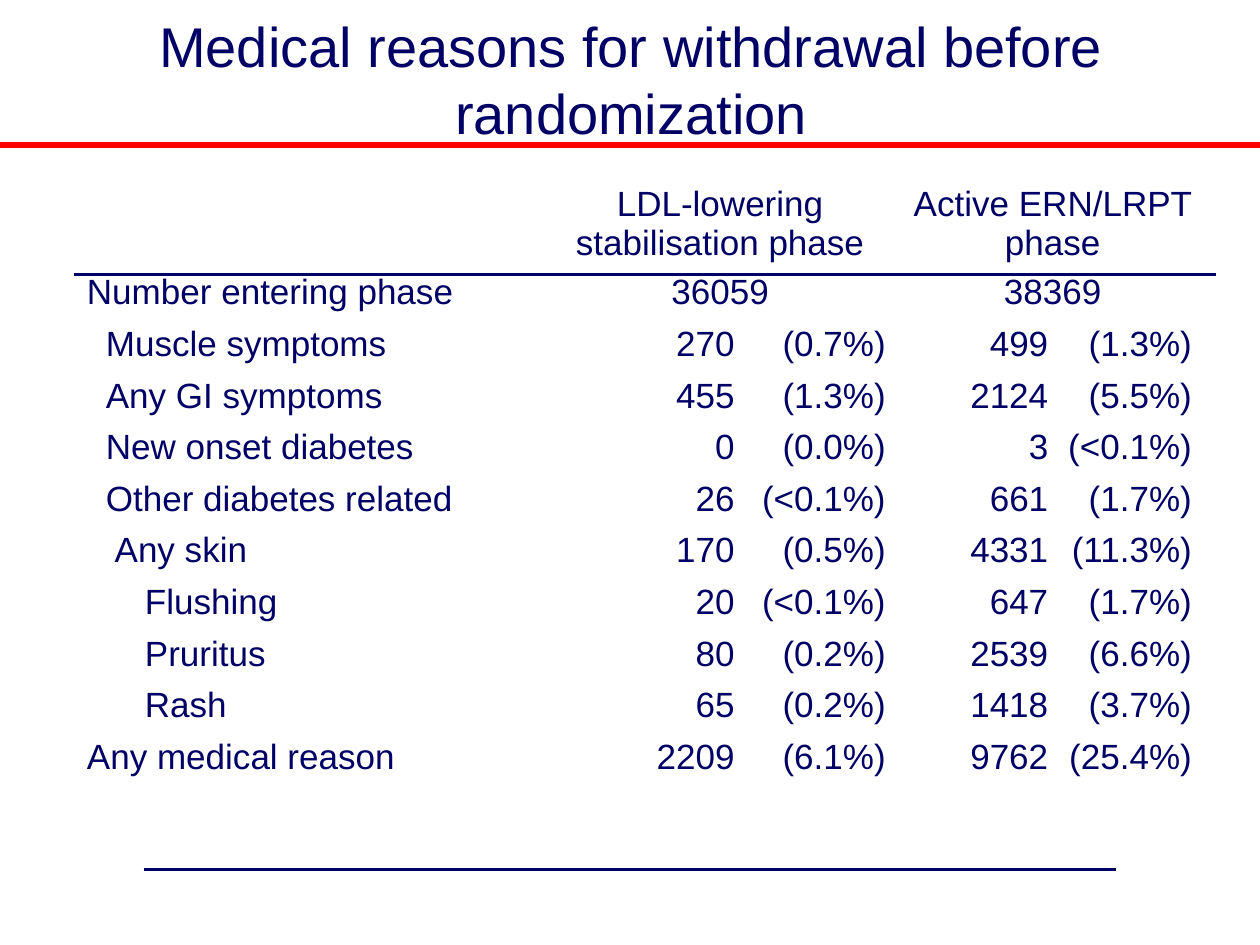
"""Build the slide on medical reasons for withdrawal before randomization."""
from pptx import Presentation
from pptx.dml.color import RGBColor
from pptx.enum import shapes, text
from pptx.oxml.ns import qn
from pptx.util import Inches, Pt

NAVY = RGBColor(0x00, 0x00, 0x66)
RED = RGBColor(0xFF, 0x00, 0x00)
FONT = "Arial"
TITLE = "Medical reasons for withdrawal before randomization"
HEADINGS = ["", "LDL-lowering stabilisation phase", "Active ERN/LRPT phase"]
COLUMN_WIDTHS = [3.7, 2.85, 2.43]
HEADING_HEIGHT, ROW_HEIGHT = 0.71, 0.41
PHASE_TABS = [(1.44, 2.64), (1.08, 2.22)]
REASONS = [
    (0, "Number entering phase", ("36059",), ("38369",)),
    (0.15, "Muscle symptoms", ("270", "(0.7%)"), ("499", "(1.3%)")),
    (0.15, "Any GI symptoms", ("455", "(1.3%)"), ("2124", "(5.5%)")),
    (0.15, "New onset diabetes", ("0", "(0.0%)"), ("3", "(<0.1%)")),
    (0.15, "Other diabetes related", ("26", "(<0.1%)"), ("661", "(1.7%)")),
    (0.22, "Any skin", ("170", "(0.5%)"), ("4331", "(11.3%)")),
    (0.46, "Flushing", ("20", "(<0.1%)"), ("647", "(1.7%)")),
    (0.46, "Pruritus", ("80", "(0.2%)"), ("2539", "(6.6%)")),
    (0.46, "Rash", ("65", "(0.2%)"), ("1418", "(3.7%)")),
    (0, "Any medical reason", ("2209", "(6.1%)"), ("9762", "(25.4%)")),
]


def write(paragraph, wording, size, align=text.PP_ALIGN.LEFT):
    """Put styled wording into a paragraph."""
    paragraph.text = wording
    paragraph.alignment = align
    paragraph.font.size = Pt(size)
    for run in paragraph.runs:
        run.font.name = FONT
        run.font.size = Pt(size)
        run.font.bold = False
        run.font.color.rgb = NAVY


def add_title(slide):
    """Add the centred title."""
    title = slide.shapes.add_textbox(Inches(0.51), 0, Inches(9), Inches(1.25))
    title.text_frame.word_wrap = True
    title.text_frame.vertical_anchor = text.MSO_ANCHOR.MIDDLE
    write(title.text_frame.paragraphs[0], TITLE, 32, text.PP_ALIGN.CENTER)


def add_rule(slide, left, right, top, color, width):
    """Add a horizontal rule."""
    rule = slide.shapes.add_connector(
        shapes.MSO_CONNECTOR.STRAIGHT,
        Inches(left), Inches(top), Inches(right), Inches(top))
    rule.line.color.rgb = color
    rule.line.width = Pt(width)
    properties = rule._element.spPr
    properties.append(properties.makeelement(qn("a:effectLst"), {}))


def set_right_tabs(paragraph, positions):
    """Give a paragraph right-aligned tab stops."""
    properties = paragraph._p.get_or_add_pPr()
    stops = properties.makeelement(qn("a:tabLst"), {})
    for position in positions:
        stops.append(stops.makeelement(
            qn("a:tab"), {"pos": str(Inches(position)), "algn": "r"}))
    properties.append(stops)


def write_phase(cell, figures, tabs):
    """Write a phase total, or a count and its percentage on tab stops."""
    paragraph = cell.text_frame.paragraphs[0]
    if len(figures) == 1:
        write(paragraph, figures[0], 20, text.PP_ALIGN.CENTER)
    else:
        set_right_tabs(paragraph, tabs)
        write(paragraph, "".join("\t" + figure for figure in figures), 20)


def add_reasons_table(slide):
    """Add the table of withdrawal reasons by phase."""
    height = HEADING_HEIGHT + ROW_HEIGHT * len(REASONS)
    table = slide.shapes.add_table(
        len(REASONS) + 1, len(HEADINGS), Inches(0.59), Inches(1.41),
        Inches(sum(COLUMN_WIDTHS)), Inches(height)).table
    table.first_row = table.horz_banding = False
    for column, width in zip(table.columns, COLUMN_WIDTHS):
        column.width = Inches(width)
    for row in table.rows:
        row.height = Inches(ROW_HEIGHT)
    table.rows[0].height = Inches(HEADING_HEIGHT)
    for cell in table.iter_cells():
        cell.fill.background()
        cell.margin_top = cell.margin_bottom = Inches(0.03)
    for column, heading in enumerate(HEADINGS):
        cell = table.cell(0, column)
        cell.vertical_anchor = text.MSO_ANCHOR.MIDDLE
        write(cell.text_frame.paragraphs[0], heading, 20, text.PP_ALIGN.CENTER)
    for row, (indent, reason, *phases) in enumerate(REASONS, 1):
        label = table.cell(row, 0)
        label.margin_left = Inches(0.1 + indent)
        write(label.text_frame.paragraphs[0], reason, 20)
        for column, (figures, tabs) in enumerate(zip(phases, PHASE_TABS), 1):
            write_phase(table.cell(row, column), figures, tabs)


def main():
    """Build and save the slide."""
    deck = Presentation()
    deck.slide_width, deck.slide_height = Inches(10), Inches(7.5)
    slide = deck.slides.add_slide(deck.slide_layouts[6])
    add_title(slide)
    add_reasons_table(slide)
    add_rule(slide, 0, 10, 1.15, RED, 3)
    add_rule(slide, 1.14, 8.86, 6.9, NAVY, 1.5)
    add_rule(slide, 0.59, 9.65, 2.18, NAVY, 1.5)
    deck.save("out.pptx")


if __name__ == "__main__":
    main()
